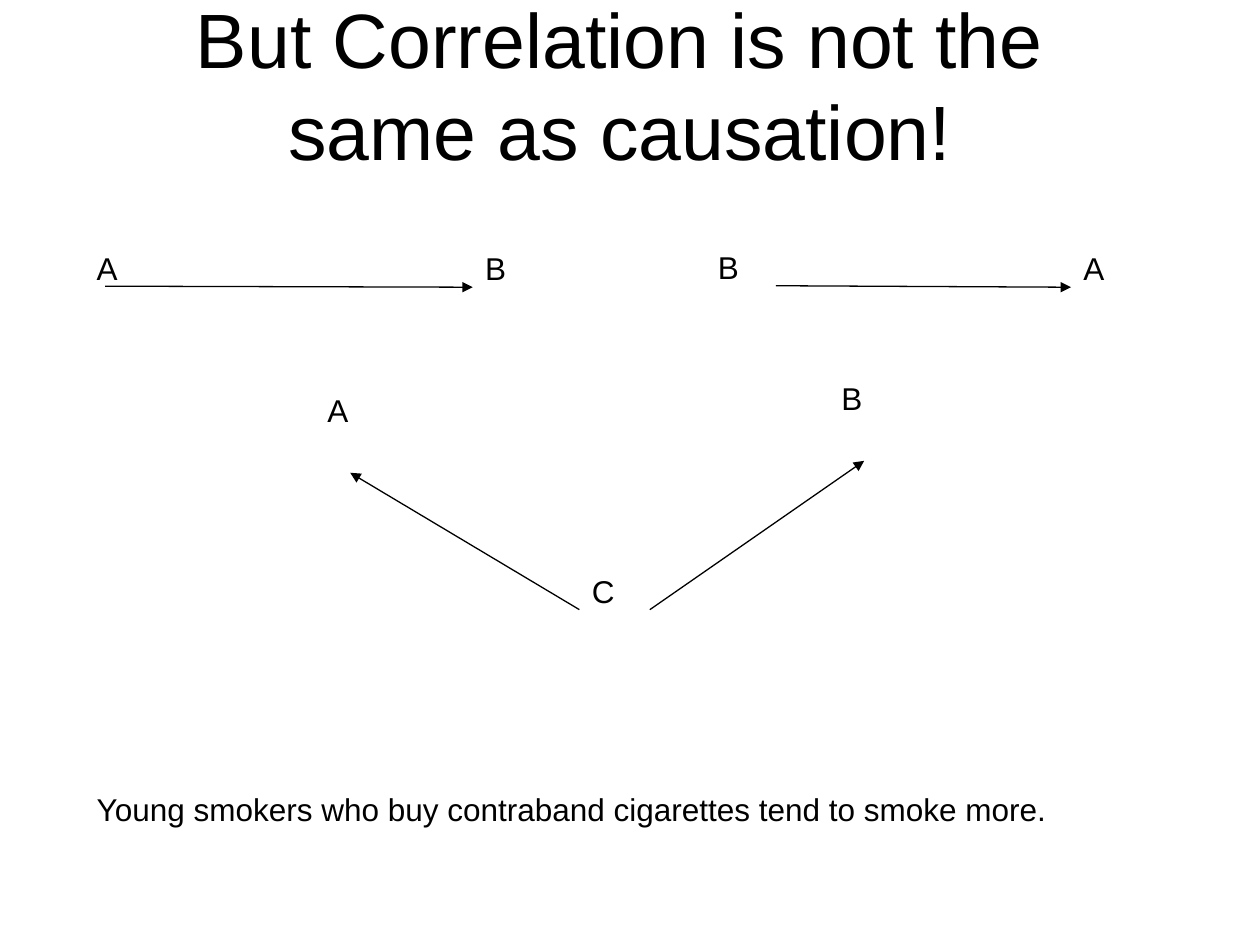
from lxml.etree import SubElement
from pptx import Presentation
from pptx.dml.color import RGBColor
from pptx.enum.shapes import MSO_CONNECTOR as Connector
from pptx.enum.text import MSO_ANCHOR as Anchor, MSO_AUTO_SIZE as AutoSize, PP_ALIGN as Align
from pptx.oxml.ns import qn
from pptx.util import Cm, Pt


def color(value):
    return RGBColor.from_string(value)


def write(shape, text, size, align, anchor):
    frame = shape.text_frame
    frame.text = text
    frame.word_wrap = True
    frame.auto_size = AutoSize.NONE
    frame.vertical_anchor = anchor
    paragraph = frame.paragraphs[0]
    paragraph.alignment = align
    paragraph.font.name = "Arial"
    paragraph.font.size = Pt(size)
    paragraph.font.color.rgb = color("000000")


presentation = Presentation()
presentation.slide_width = Cm(25.4)
presentation.slide_height = Cm(19.05)
slide = presentation.slides.add_slide(presentation.slide_layouts[5])

title = slide.shapes.title
title.left, title.top, title.width, title.height = Cm(1.7), Cm(0.1), Cm(21.6), Cm(3.18)
write(title, "But Correlation is not the same as causation!", 44, Align.CENTER, Anchor.MIDDLE)

variables = {
    "forward cause": ("A", 1.7, 4.9),
    "forward effect": ("B", 9.53, 4.9),
    "reverse effect": ("A", 21.59, 4.9),
    "reverse cause": ("B", 14.22, 4.87),
    "left effect": ("A", 6.35, 7.75),
    "right effect": ("B", 16.71, 7.51),
    "common cause": ("C", 11.68, 11.4),
}
boxes = {}
for name, (letter, left, top) in variables.items():
    boxes[name] = slide.shapes.add_textbox(Cm(left), Cm(top), Cm(1.42), Cm(1.78))
    write(boxes[name], letter, 18, Align.LEFT, Anchor.TOP)

TOP, LEFT, BOTTOM, RIGHT = range(4)
arrows = [
    ("forward cause", None, "forward effect", LEFT),
    ("reverse cause", RIGHT, "reverse effect", LEFT),
    ("common cause", LEFT, "left effect", BOTTOM),
    ("common cause", RIGHT, "right effect", BOTTOM),
]
for cause, cause_side, effect, effect_side in arrows:
    arrow = slide.shapes.add_connector(Connector.STRAIGHT, Cm(2.12), Cm(5.77), Cm(9.53), Cm(5.79))
    if cause_side is not None:
        arrow.begin_connect(boxes[cause], cause_side)
    arrow.end_connect(boxes[effect], effect_side)
    arrow.line.color.rgb = color("000000")
    arrow.line.width = Pt(0.75)
    SubElement(arrow.line._get_or_add_ln(), qn("a:tailEnd"), type="triangle")
    SubElement(arrow._element.spPr, qn("a:effectLst"))

caption = slide.shapes.add_textbox(Cm(1.7), Cm(15.8), Cm(19.84), Cm(1.02))
write(caption, "Young smokers who buy contraband cigarettes tend to smoke more.", 18, Align.LEFT, Anchor.TOP)

presentation.save("out.pptx")
